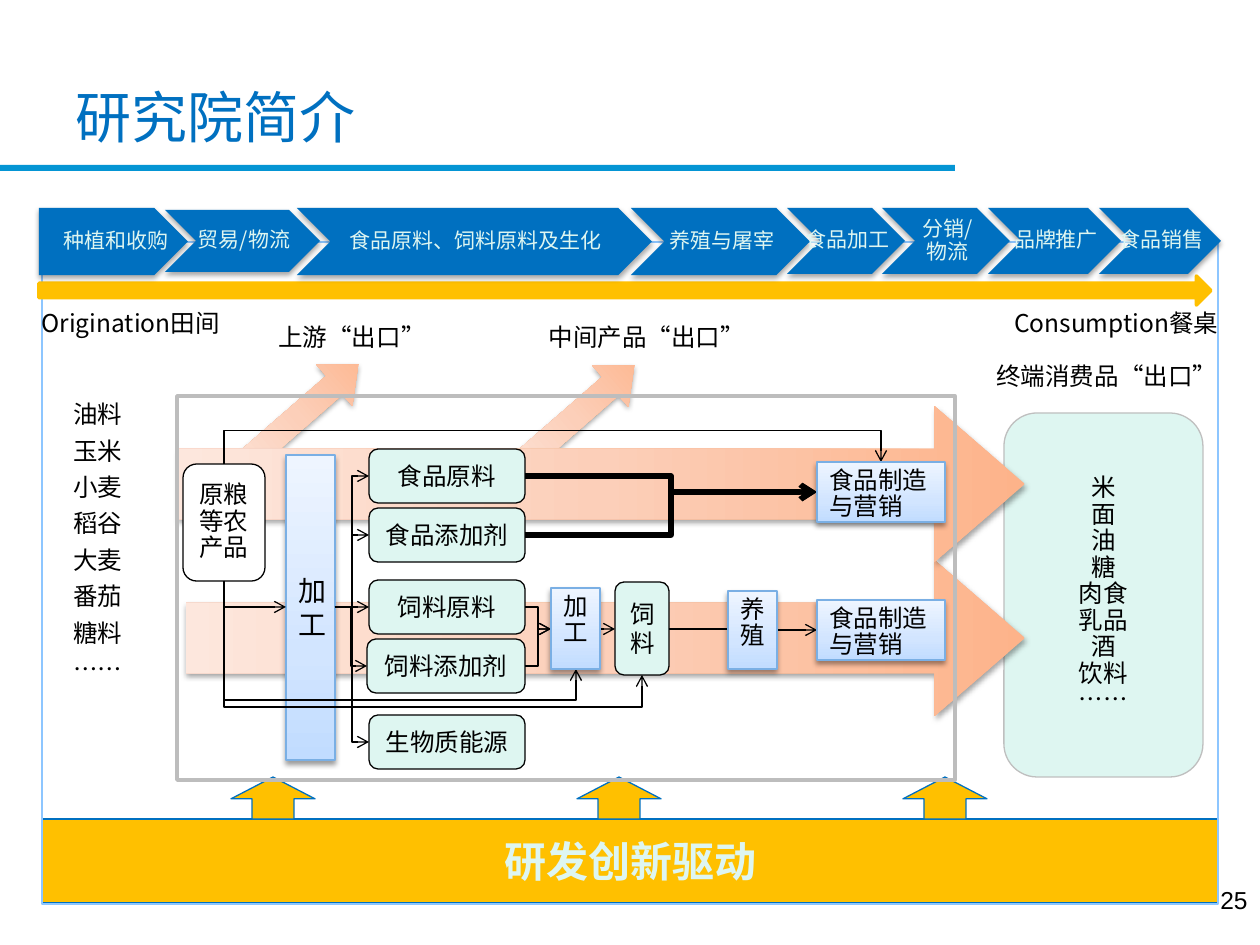
from typing import NamedTuple, Optional

from lxml import etree
from pptx import Presentation
from pptx import util as u
from pptx.dml.color import RGBColor
from pptx.enum import shapes as es, text as et
from pptx.oxml.ns import qn

PX = u.Inches(1) / 126
FONT = "Noto Sans CJK SC"
HUE = {"blue": "0070C0", "bar": "0595D4", "gold": "FFC000", "mint": "DEF6F1",
       "sky": "8DC6FF", "steel": "7AAFE4", "grey": "BFBFBF", "frame": "BDBDBD",
       "black": "000000", "white": "FFFFFF"}
# Gradients: stops as (percent, colour), and a counter-clockwise angle
PEACH = ([(0, "FDB38A"), (50, "FCCFB9"), (100, "FDE7DD")], 180)
ICE = ([(0, "C1DCFF"), (35, "D2E5FF"), (100, "EEF5FF")], 90)
KIND = es.MSO_SHAPE
LEFT, MID, RIGHT = et.PP_ALIGN.LEFT, et.PP_ALIGN.CENTER, et.PP_ALIGN.RIGHT


class Box(NamedTuple):
    x: int
    y: int
    w: int
    h: int


class Step(NamedTuple):
    label: str
    box: Box


class Link(NamedTuple):
    x1: int
    y1: int
    x2: int
    y2: int
    via: Optional[int] = None  # level of the middle run when it leaves vertically
    wide: float = 0.75


def emu(*vals: float) -> list:
    return [u.Emu(round(v * PX)) for v in vals]


def rgb(name: str) -> RGBColor:
    return RGBColor.from_string(HUE[name])


def write(shape, words: str, size=14, hue="black", font=FONT, bold=False, align=LEFT,
          mid=False, wrap=True, line=None, before=0, pad=None) -> None:
    """Fill a shape with text; a newline starts a paragraph, \\v breaks a line."""
    tf = shape.text_frame
    tf.text = words
    tf.word_wrap = wrap
    tf.vertical_anchor = et.MSO_ANCHOR.MIDDLE if mid else et.MSO_ANCHOR.TOP
    if pad:
        tf.margin_left, tf.margin_top, tf.margin_right, tf.margin_bottom = emu(*pad)
    for i, par in enumerate(tf.paragraphs):
        par.alignment = align
        par.line_spacing = line
        par.space_before = u.Pt(before if i else 0)
        for run in par.runs:
            run.font.size, run.font.bold, run.font.name = u.Pt(size), bold, font
            run.font.color.rgb = rgb(hue)
            if font == FONT:
                etree.SubElement(run.font._element, qn("a:ea"), typeface=font)


def label(slide, box: Box, words: str, **form) -> None:
    write(slide.shapes.add_textbox(*emu(*box)), words, **form)


def draw(slide, kind, box: Box, fill=None, edge=None, wide=0.75, adj=(), turn=0,
         shade=0):
    s = slide.shapes.add_shape(kind, *emu(*box))
    s.shadow.inherit = False
    s.rotation = turn
    for i, val in enumerate(adj):
        s.adjustments[i] = val
    if fill is None:
        s.fill.background()
    elif isinstance(fill, str):
        s.fill.solid()
        s.fill.fore_color.rgb = rgb(fill)
    else:
        stops, angle = fill
        s.fill.gradient()
        s.fill.gradient_angle = angle
        lst = s._element.spPr.find(".//" + qn("a:gsLst"))
        lst.clear()
        for pos, hue in stops:
            gs = etree.SubElement(lst, qn("a:gs"), pos=str(pos * 1000))
            etree.SubElement(gs, qn("a:srgbClr"), val=hue)
    if edge:
        s.line.color.rgb = rgb(edge)
        s.line.width = u.Pt(wide)
    else:
        s.line.fill.background()
    if shade:
        fx = s._element.spPr.find(qn("a:effectLst"))
        sh = etree.SubElement(fx, qn("a:outerShdw"), blurRad=str(u.Pt(3.1)),
                              dist=str(u.Pt(1.8)), dir="5400000", rotWithShape="0")
        clr = etree.SubElement(sh, qn("a:srgbClr"), val=HUE["black"])
        etree.SubElement(clr, qn("a:alpha"), val=str(shade * 1000))
    return s


def join(slide, k: Link) -> None:
    """Draw an arrow: straight, elbowed, or leaving vertically when via is set."""
    ends, dx, dy = k[:4], k.x2 - k.x1, k.y2 - k.y1
    if k.via is not None:  # lay the elbow flat; it is turned below
        cx, cy, w, h = k.x1 + dx / 2, k.y1 + dy / 2, abs(dy), abs(dx)
        ends = (cx - w / 2, cy - h / 2, cx + w / 2, cy + h / 2)
    kind = es.MSO_CONNECTOR.ELBOW if dy else es.MSO_CONNECTOR.STRAIGHT
    c = slide.shapes.add_connector(kind, *emu(*ends))
    c.line.color.rgb = rgb("black")
    c.line.width = u.Pt(k.wide)
    etree.SubElement(c.line._get_or_add_ln(), qn("a:tailEnd"), type="arrow")
    sp = c._element.spPr
    etree.SubElement(sp, qn("a:effectLst"))
    if k.via is None:
        return
    frm, geo = sp.find(qn("a:xfrm")), sp.find(qn("a:prstGeom"))
    frm.set("rot", str(270 * 60000))
    if dy > 0:
        frm.set("flipH", "1")
    if k.via == k.y2:
        geo.set("prst", "bentConnector2")
    else:
        part = round((k.via - k.y1) / dy * 100000)
        etree.SubElement(geo.find(qn("a:avLst")), qn("a:gd"), name="adj1",
                         fmla=f"val {part}")


STEPS = [Step("种植和收购", Box(39, 208, 149, 67)), Step("贸易/物流", Box(165, 210, 155, 62)),
         Step("食品原料、饲料原料及生化", Box(297, 208, 355, 67)),
         Step("养殖与屠宰", Box(631, 208, 179, 67)), Step("食品加工", Box(787, 208, 118, 66)),
         Step("分销/\v物流", Box(882, 208, 128, 66)), Step("品牌推广", Box(988, 208, 133, 66)),
         Step("食品销售", Box(1099, 208, 122, 66))]
NOTES = [(Box(29, 302, 262, 43), "Origination田间", LEFT),
         (Box(947, 302, 284, 43), "Consumption餐桌", RIGHT),
         (Box(266, 316, 178, 43), "上游“出口”", LEFT),
         (Box(527, 316, 240, 43), "中间产品“出口”", MID),
         (Box(984, 355, 256, 43), "终端消费品“出口”", LEFT)]
GOODS = [Step("食品原料", Box(369, 449, 156, 54)), Step("食品添加剂", Box(369, 508, 156, 54)),
         Step("饲料原料", Box(369, 580, 156, 54)), Step("饲料添加剂", Box(367, 639, 158, 54)),
         Step("生物质能源", Box(369, 715, 156, 54)), Step("饲料", Box(615, 582, 54, 93))]
WORKS = [Step("食品制造与营销", Box(817, 462, 128, 60)), Step("加工", Box(551, 588, 49, 81)),
         Step("养殖", Box(728, 591, 49, 78)), Step("食品制造与营销", Box(817, 600, 128, 60))]
LINKS = [Link(335, 607, g.box.x, g.box.y + 27) for g in GOODS[:5]] + [
    Link(525, 666, 551, 629), Link(525, 607, 551, 629),
    Link(525, 535, 817, 492, wide=3), Link(525, 476, 817, 492, wide=3),
    Link(600, 629, 615, 629), Link(669, 629, 817, 630),
    Link(224, 464, 881, 462, via=430), Link(224, 581, 286, 607, via=607),
    Link(224, 581, 576, 669, via=700), Link(224, 581, 642, 675, via=707)]


def main() -> None:
    prs = Presentation()
    prs.slide_width, prs.slide_height = u.Inches(10), u.Inches(7.5)
    slide = prs.slides.add_slide(prs.slide_layouts[5])

    # Title, rule and page number
    draw(slide, KIND.RECTANGLE, Box(0, 165, 955, 6), "bar")
    head = slide.shapes.title
    head.left, head.top, head.width, head.height = emu(63, 38, 1134, 157)
    write(head, "研究院简介", size=32, hue="blue", font="Arial", mid=True)
    label(slide, Box(966, 879, 294, 66), "25", font="Arial", align=RIGHT)

    # Foundation with its upward arrows, and the outer frame
    base = draw(slide, KIND.RECTANGLE, Box(42, 819, 1176, 84), "gold", "blue")
    write(base, "研发创新驱动", size=24, hue="mint", bold=True, align=MID, mid=True,
          wrap=False)
    draw(slide, KIND.RECTANGLE, Box(42, 242, 1176, 662), edge="sky")
    for x in (231, 577, 903):
        draw(slide, KIND.UP_ARROW, Box(x, 777, 84, 42), "gold", "blue", adj=(0.5, 0.52))

    # Consumer goods
    end = draw(slide, KIND.ROUNDED_RECTANGLE, Box(1004, 413, 199, 364), "mint", "grey")
    write(end, "米\n面\n油\n糖\n肉食\n乳品\n酒\n饮料\n……", align=MID, mid=True, line=0.9)

    # Peach flow arrows
    for box, turn in ((Box(219, 389, 159, 55), 318.9), (Box(495, 390, 159, 55), 318.9),
                      (Box(186, 560, 839, 156), 0), (Box(178, 406, 847, 156), 0)):
        draw(slide, KIND.RIGHT_ARROW, box, PEACH, adj=(0.45, 0.58), turn=turn, shade=35)

    # Crops and captions
    label(slide, Box(57, 393, 82, 300), "油料\n玉米\n小麦\n稻谷\n大麦\n番茄\n糖料\n……",
          align=MID, before=4)
    for box, words, side in NOTES:
        label(slide, box, words, align=side)

    # Value chain
    draw(slide, KIND.RIGHT_ARROW, Box(39, 276, 1172, 29), "gold", "gold", wide=2)
    for i, step in enumerate(STEPS):
        draw(slide, KIND.CHEVRON if i else KIND.PENTAGON, step.box, "blue", shade=35)
        label(slide, step.box, step.label, size=12, hue="mint", align=MID, mid=True,
              line=0.9, pad=(6 if i else 9, 5, 3, 5))

    # Process map
    draw(slide, KIND.RECTANGLE, Box(177, 396, 778, 384), edge="frame", wide=2)
    plant = draw(slide, KIND.RECTANGLE, Box(286, 455, 49, 305), ICE, "steel", shade=38)
    write(plant, "加\n工", size=16, align=MID, mid=True)
    raw = draw(slide, KIND.ROUNDED_RECTANGLE, Box(183, 464, 82, 117), "white", "black")
    write(raw, "原粮等农产品", align=MID, mid=True, line=0.9)
    for step in GOODS:
        s = draw(slide, KIND.ROUNDED_RECTANGLE, step.box, "mint", "black")
        write(s, step.label, align=MID, mid=True)
    for link in LINKS:
        join(slide, link)
    for step in WORKS:
        s = draw(slide, KIND.RECTANGLE, step.box, ICE, "steel", shade=38)
        write(s, step.label, line=0.9)

    prs.save("out.pptx")


if __name__ == "__main__":
    main()
